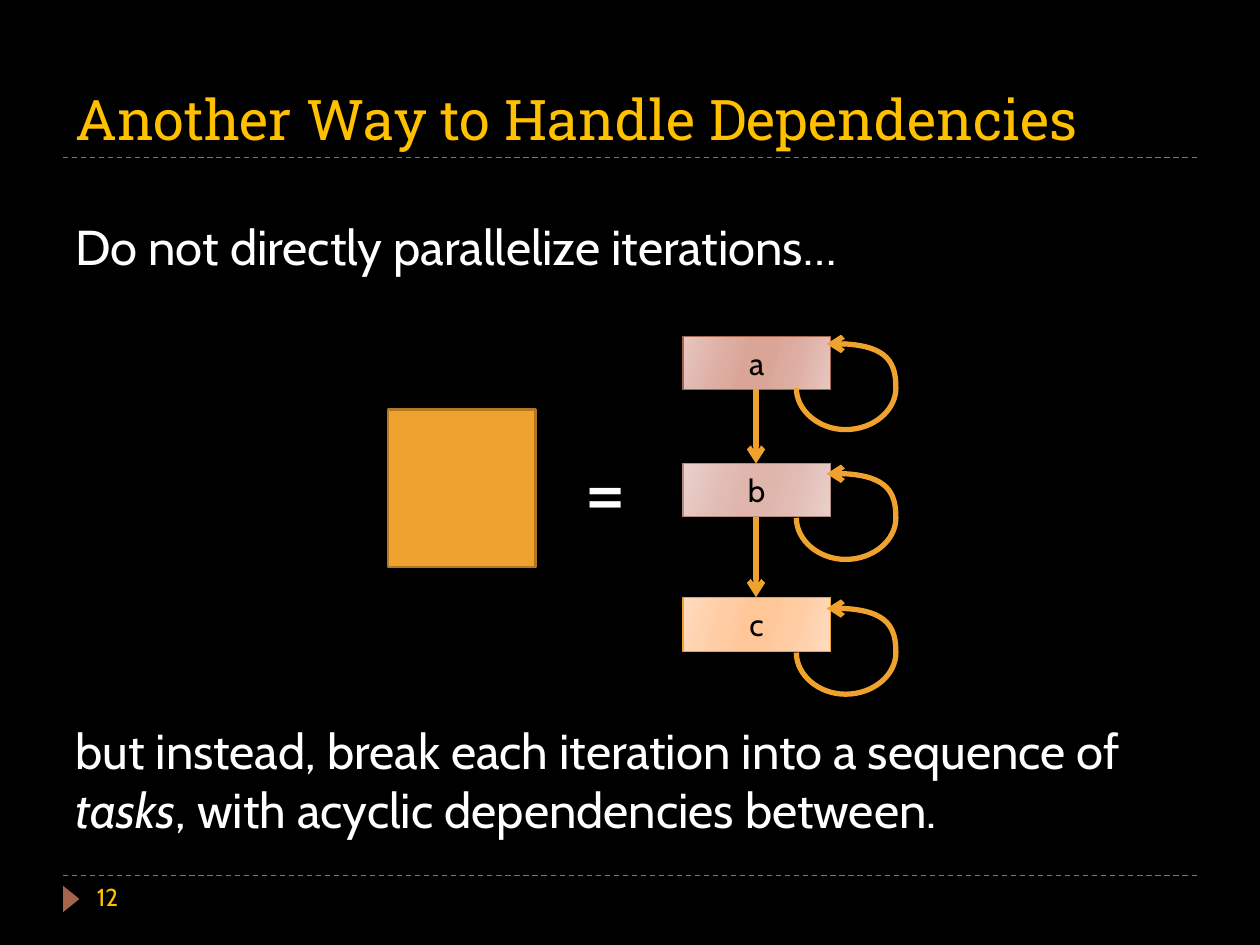
from dataclasses import dataclass

from pptx import Presentation
from pptx.dml.color import RGBColor
from pptx.enum.dml import MSO_LINE
from pptx.enum.shapes import MSO_CONNECTOR, MSO_SHAPE
from pptx.enum.text import MSO_ANCHOR, MSO_AUTO_SIZE, PP_ALIGN
from pptx.oxml.ns import qn
from pptx.util import Inches, Pt
from lxml import etree

RECT, TRIANGLE = MSO_SHAPE.RECTANGLE, MSO_SHAPE.ISOSCELES_TRIANGLE
STRAIGHT, DASH = MSO_CONNECTOR.STRAIGHT, MSO_LINE.DASH
TOP, MIDDLE, BOTTOM = MSO_ANCHOR.TOP, MSO_ANCHOR.MIDDLE, MSO_ANCHOR.BOTTOM
LEFT, CENTER = PP_ALIGN.LEFT, PP_ALIGN.CENTER
GROW = MSO_AUTO_SIZE.SHAPE_TO_FIT_TEXT

BODY, HEADING = "Cabin", "Roboto Slab"
ORANGE, RUST, GOLD, WHITE, BLACK = "F0A22E", "A5644E", "FFC000", "FFFFFF", "000000"
STOPS = (0, 30, 45, 55, 73, 100)
TASK_LEFT, TASK_WIDTH = 5.42, 1.17


@dataclass
class Task:
    name: str
    top: float
    height: float
    outer: str
    middle: str
    inner: str
    border: str
    loop_top: float

    @property
    def bottom(self) -> float:
        return self.top + self.height


TASKS = [
    Task("a", 2.67, 0.42, "E6C6C0", "DDADA2", "DAA497", RUST, 2.73),
    Task("b", 3.68, 0.42, "E9D0CB", "E1BCB4", "DFB5AC", "B58B80", 3.76),
    Task("c", 4.74, 0.43, "FFDBBF", "FFCCA3", "FFC798", ORANGE, 4.83),
]


def rgb(color: str) -> RGBColor:
    return RGBColor.from_string(color)


def set_line(line, color: str, width: float) -> None:
    line.color.rgb = rgb(color)
    line.width = Pt(width)


def set_text(sp, text, size=28, font=BODY, color=WHITE, anchor=TOP,
             align=LEFT, wrap=True, grow=False, italic="") -> None:
    tf = sp.text_frame
    tf.word_wrap = wrap
    tf.vertical_anchor = anchor
    if grow:
        tf.auto_size = GROW
    p = tf.paragraphs[0]
    p.alignment = align
    before, found, after = text.partition(italic) if italic else (text, "", "")
    for part in filter(None, (before, found, after)):
        r = p.add_run()
        r.text = part
        r.font.name = font
        r.font.size = Pt(size)
        r.font.color.rgb = rgb(color)
        r.font.italic = part == italic


def add_text(s, text: str, x: float, y: float, w: float, h: float, **fmt) -> None:
    sp = s.shapes.add_textbox(Inches(x), Inches(y), Inches(w), Inches(h))
    set_text(sp, text, **fmt)


def add_box(s, kind, x: float, y: float, w: float, h: float, fill: str):
    sp = s.shapes.add_shape(kind, Inches(x), Inches(y), Inches(w), Inches(h))
    sp.shadow.inherit = False
    sp.fill.solid()
    sp.fill.fore_color.rgb = rgb(fill)
    sp.line.fill.background()
    return sp


def add_line(s, x1: float, y1: float, x2: float, y2: float, color: str, width: float):
    cx = s.shapes.add_connector(STRAIGHT, Inches(x1), Inches(y1), Inches(x2), Inches(y2))
    set_line(cx.line, color, width)
    etree.SubElement(cx._element.spPr, qn("a:effectLst"))
    return cx


def add_arrowhead(sp, end: str) -> None:
    etree.SubElement(sp.line._get_or_add_ln(), qn(f"a:{end}"), type="arrow")


def add_color(parent, color: str):
    return etree.SubElement(parent, qn("a:srgbClr"), val=color)


def add_task(s, task: Task) -> None:
    sp = add_box(s, RECT, TASK_LEFT, task.top, TASK_WIDTH, task.height, task.inner)
    sp.fill.gradient()
    sp.fill.gradient_angle = 360 - 16
    stops = sp._element.spPr.find(qn("a:gradFill")).find(qn("a:gsLst"))
    for stop in list(stops):
        stops.remove(stop)
    half = [task.outer, task.middle, task.inner]
    for pos, color in zip(STOPS, half + half[::-1]):
        add_color(etree.SubElement(stops, qn("a:gs"), pos=str(pos * 1000)), color)
    set_line(sp.line, task.border, 0.75)
    shadow = etree.SubElement(
        sp._element.spPr.find(qn("a:effectLst")), qn("a:outerShdw"),
        blurRad=str(Pt(3)), dist=str(Pt(2)), dir=str(90 * 60000), rotWithShape="0")
    etree.SubElement(add_color(shadow, BLACK), qn("a:alpha"), val="40000")
    set_text(sp, task.name, size=18, color=BLACK, anchor=MIDDLE, align=CENTER)


def curve_segments(sp) -> None:
    outline = next(sp._element.iter(qn("a:moveTo"))).getparent()
    lines = outline.findall(qn("a:lnTo"))
    for i in range(0, len(lines), 3):
        curve = etree.SubElement(outline, qn("a:cubicBezTo"))
        for line in lines[i:i + 3]:
            curve.append(line[0])
            outline.remove(line)


def add_loop(s, y: float) -> None:
    knots = [(6.56, y), (7.04, y - 0.02), (7.11, y + 0.16), (7.11, y + 0.35),
             (7.11, y + 0.53), (6.93, y + 0.68), (6.71, y + 0.68),
             (6.5, y + 0.68), (6.32, y + 0.53), (6.32, y + 0.35)]
    start, *rest = [(Inches(px), Inches(py)) for px, py in knots]
    fb = s.shapes.build_freeform(*start)
    fb.add_line_segments(rest, close=False)
    sp = fb.convert_to_shape()
    curve_segments(sp)
    sp.shadow.inherit = False
    sp.fill.background()
    set_line(sp.line, ORANGE, 3)
    add_arrowhead(sp, "headEnd")


def main() -> None:
    prs = Presentation()
    prs.slide_width, prs.slide_height = Inches(10), Inches(7.5)
    s = prs.slides.add_slide(prs.slide_layouts[6])
    s.background.fill.solid()
    s.background.fill.fore_color.rgb = rgb(BLACK)

    for y in (6.95, 1.25):
        add_line(s, 0.5, y, 9.5, y, RUST, 0.75).line.dash_style = DASH
    add_box(s, TRIANGLE, 0.46, 7.07, 0.21, 0.13, RUST).rotation = 90
    add_text(s, "Another Way to Handle Dependencies", 0.5, 0.17, 9, 1.08,
             size=32, font=HEADING, color=GOLD, anchor=BOTTOM)
    add_text(s, "12", 0.67, 6.95, 2.17, 0.4, size=14, color=GOLD)

    iteration = add_box(s, RECT, 3.08, 3.25, 1.17, 1.25, ORANGE)
    set_line(iteration.line, "B27822", 1.5)
    add_text(s, "=", 4.54, 3.42, 0.59, 0.91, size=48, wrap=False, grow=True)

    for task in TASKS:
        add_task(s, task)
    for upper, lower in zip(TASKS, TASKS[1:]):
        add_arrowhead(add_line(s, 6, upper.bottom, 6, lower.top, ORANGE, 3), "tailEnd")
    for task in TASKS:
        add_loop(s, task.loop_top)

    add_text(s, "Do not directly parallelize iterations…", 0.5, 1.67, 6.35, 0.57,
             wrap=False, grow=True)
    add_text(s, "but instead, break each iteration into a sequence of tasks, "
             "with acyclic dependencies between.", 0.5, 5.67, 9, 1.04,
             grow=True, italic="tasks")
    prs.save("out.pptx")


if __name__ == "__main__":
    main()
